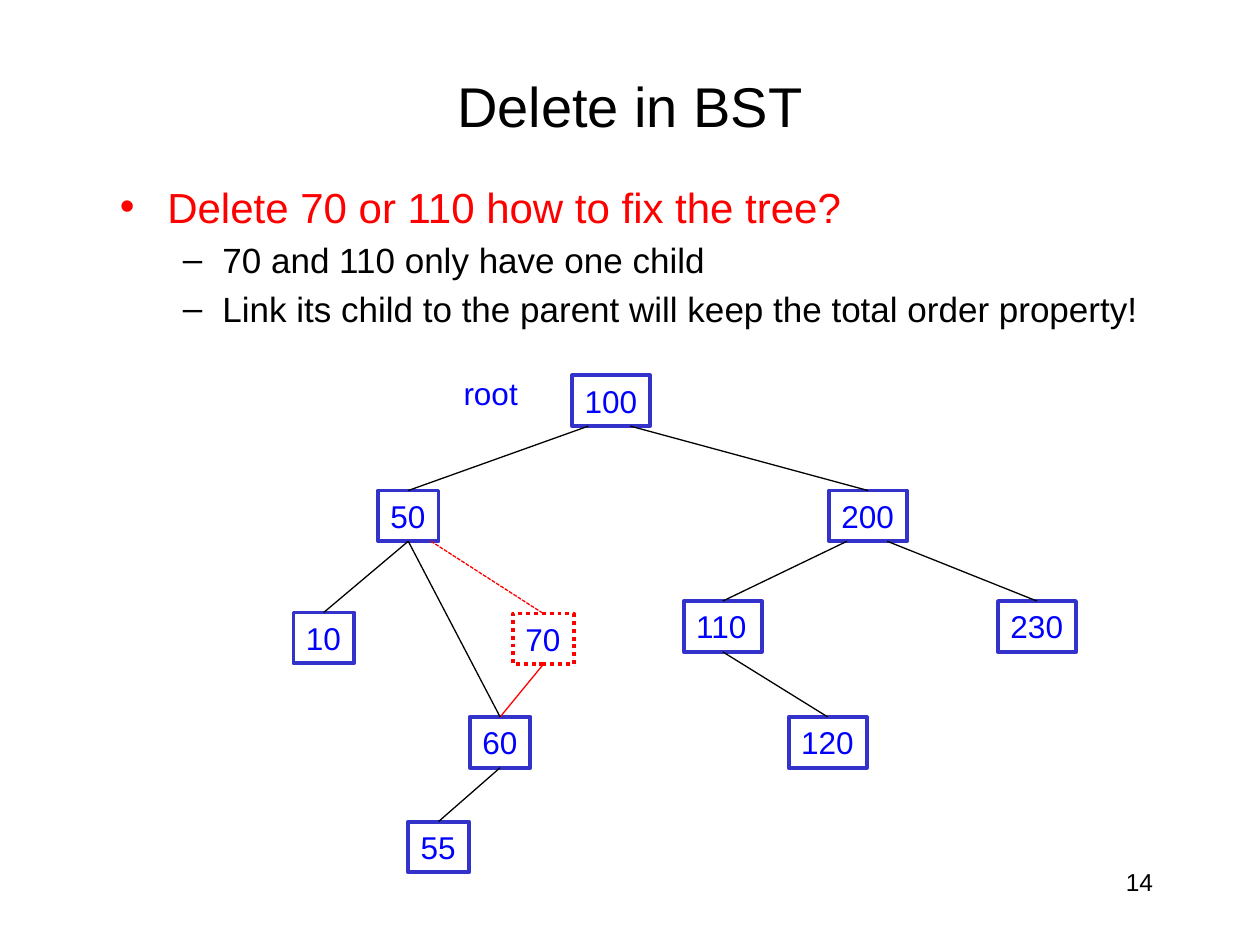
from dataclasses import dataclass

from lxml.etree import SubElement
from pptx import Presentation
from pptx.dml.color import RGBColor
from pptx.enum.dml import MSO_LINE
from pptx.enum.shapes import MSO_CONNECTOR, MSO_SHAPE
from pptx.enum.text import MSO_ANCHOR, PP_ALIGN
from pptx.oxml.ns import qn
from pptx.util import Pt


@dataclass(frozen=True)
class Theme:
    font: str = "Arial"
    ink: str = "000000"
    accent: str = "FF0000"
    border: str = "3333CC"
    key: str = "0000FF"
    title_size: float = 32
    point_size: float = 24
    detail_size: float = 20
    key_size: float = 18
    number_size: float = 14
    border_width: float = 2.25
    edge_width: float = 0.75


THEME = Theme()

TITLE = "Delete in BST"
PAGE_NUMBER = "14"
ROOT_LABEL = "root"
POINTS = [
    (0, "Delete 70 or 110 how to fix the tree?"),
    (1, "70 and 110 only have one child"),
    (1, "Link its child to the parent will keep the total order property!"),
]
LEVELS = [
    dict(bullet="•", margin=27, hang=27, size=THEME.point_size, color=THEME.accent),
    dict(bullet="–", margin=58.5, hang=22.5, size=THEME.detail_size, color=THEME.ink),
]

NODES = {
    "100": (349.2, 214.5),
    "50": (233.3, 280.3),
    "200": (496, 280.3),
    "10": (185, 350),
    "70": (310.5, 350.6),
    "55": (250.6, 469.5),
    "60": (285.8, 409.7),
    "110": (413, 343.5),
    "230": (592.6, 343.5),
    "120": (473, 409.7),
}
REMOVED = "70"
NODE_HEIGHT = 29
NODE_WIDTHS = {2: 34.6, 3: 44.5}

EDGES = [
    ("100", "50", -13),
    ("100", "200", 11),
    ("50", "10", 0),
    ("50", "70", 13),
    ("200", "110", -12),
    ("200", "230", 11),
    ("70", "60", 0),
    ("60", "55", 0),
    ("110", "120", 0),
    ("50", "60", 0),
]


def rgb(code):
    return RGBColor.from_string(code)


def write(paragraph, text, *, size, color, align=PP_ALIGN.LEFT, bullet=None,
          margin=0, hang=0):
    paragraph.alignment = align
    run = paragraph.add_run()
    run.text = text
    run.font.name = THEME.font
    run.font.size = Pt(size)
    run.font.color.rgb = rgb(color)
    if bullet:
        paragraph.space_before = Pt(size * 0.2)
        properties = paragraph._p.get_or_add_pPr()
        properties.set("marL", str(Pt(margin)))
        properties.set("indent", str(-Pt(hang)))
        SubElement(properties, qn("a:buFont")).set("typeface", THEME.font)
        SubElement(properties, qn("a:buChar")).set("char", bullet)


def add_text_frame(slide, left, top, width, height, anchor=MSO_ANCHOR.TOP, wrap=True):
    frame = slide.shapes.add_textbox(Pt(left), Pt(top), Pt(width), Pt(height)).text_frame
    frame.word_wrap = wrap
    frame.vertical_anchor = anchor
    return frame


def add_node(slide, key):
    center, top = NODES[key]
    width = NODE_WIDTHS[len(key)]
    node = slide.shapes.add_shape(
        MSO_SHAPE.RECTANGLE, Pt(center - width / 2), Pt(top), Pt(width), Pt(NODE_HEIGHT))
    node.shadow.inherit = False
    node.fill.background()
    node.line.width = Pt(THEME.border_width)
    node.line.color.rgb = rgb(THEME.accent if key == REMOVED else THEME.border)
    if key == REMOVED:
        node.line.dash_style = MSO_LINE.ROUND_DOT
    frame = node.text_frame
    frame.word_wrap = False
    frame.vertical_anchor = MSO_ANCHOR.TOP
    write(frame.paragraphs[0], key, size=THEME.key_size, color=THEME.key)


def add_edge(slide, parent, child, offset):
    parent_x, parent_top = NODES[parent]
    child_x, child_top = NODES[child]
    edge = slide.shapes.add_connector(
        MSO_CONNECTOR.STRAIGHT, Pt(parent_x + offset), Pt(parent_top + NODE_HEIGHT),
        Pt(child_x), Pt(child_top))
    edge.line.width = Pt(THEME.edge_width)
    edge.line.color.rgb = rgb(THEME.accent if REMOVED in (parent, child) else THEME.ink)
    if child == REMOVED:
        edge.line.dash_style = MSO_LINE.SQUARE_DOT
    SubElement(edge._element.spPr, qn("a:effectLst"))


def main():
    deck = Presentation()
    deck.slide_width, deck.slide_height = Pt(720), Pt(540)
    slide = deck.slides.add_slide(deck.slide_layouts[6])

    number = add_text_frame(slide, 516, 492, 150, 36)
    write(number.paragraphs[0], PAGE_NUMBER, size=THEME.number_size, color=THEME.ink,
          align=PP_ALIGN.RIGHT)

    title = add_text_frame(slide, 54, 30, 612, 60, anchor=MSO_ANCHOR.MIDDLE)
    write(title.paragraphs[0], TITLE, size=THEME.title_size, color=THEME.ink,
          align=PP_ALIGN.CENTER)

    body = add_text_frame(slide, 61.5, 100, 612, 84)
    for index, (level, text) in enumerate(POINTS):
        paragraph = body.add_paragraph() if index else body.paragraphs[0]
        paragraph.level = level
        write(paragraph, text, **LEVELS[level])

    for key in NODES:
        add_node(slide, key)

    root = add_text_frame(slide, 257.8, 210.2, 45.4, NODE_HEIGHT, wrap=False)
    write(root.paragraphs[0], ROOT_LABEL, size=THEME.key_size, color=THEME.key)

    for parent, child, offset in EDGES:
        add_edge(slide, parent, child, offset)

    deck.save("out.pptx")


if __name__ == "__main__":
    main()
